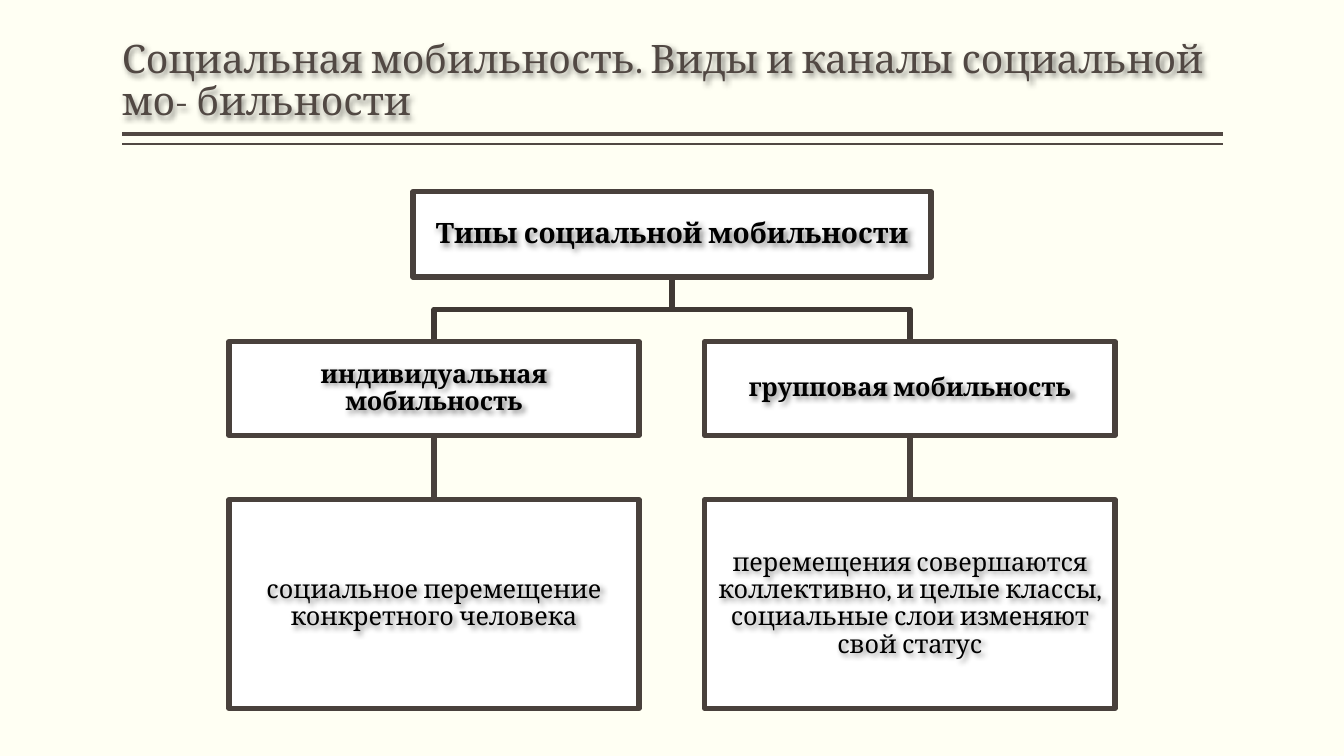
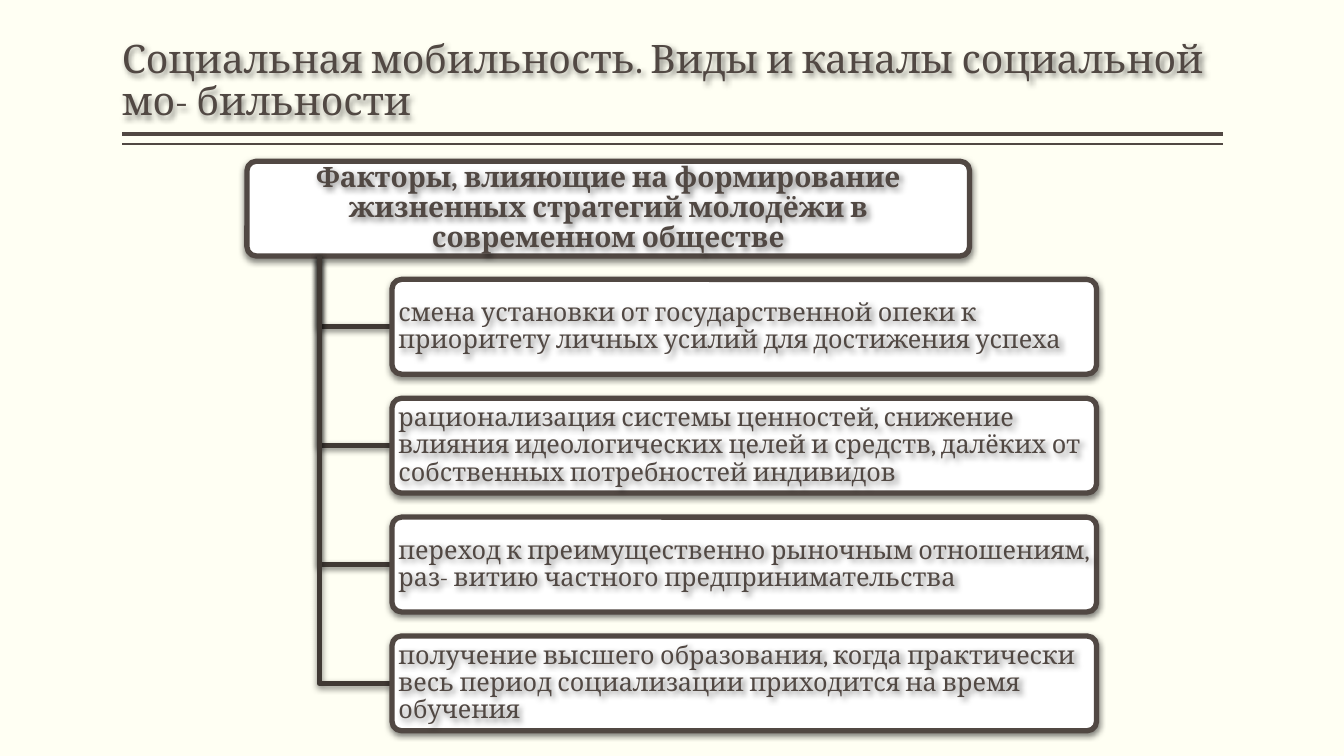
from lxml import etree
from pptx import Presentation
from pptx.dml.color import RGBColor
from pptx.enum.shapes import MSO_CONNECTOR, MSO_SHAPE
from pptx.enum.text import MSO_ANCHOR, MSO_AUTO_SIZE, PP_ALIGN
from pptx.oxml.ns import qn
from pptx.util import Pt

STRAIGHT = MSO_CONNECTOR.STRAIGHT
RECT, ROUNDED = MSO_SHAPE.RECTANGLE, MSO_SHAPE.ROUNDED_RECTANGLE
LEFT, CENTER = PP_ALIGN.LEFT, PP_ALIGN.CENTER
MIDDLE, BOTTOM = MSO_ANCHOR.MIDDLE, MSO_ANCHOR.BOTTOM
NO_AUTOFIT = MSO_AUTO_SIZE.NONE
TOP_SIDE, BOTTOM_SIDE = 0, 2

COLORS = {
    "paper": "FFFFF3",
    "white": "FFFFFF",
    "black": "000000",
    "brown": "514843",
    "frame": "49413C",
    "branch": "403934",
}
FONT = "Cambria"
FRAME_WIDTH = 3.78
# blur, distance (points), direction (degrees), opacity (percent)
TEXT_SHADOW = (4, 2.5, 45, 45)
BOX_SHADOW = (4.5, 1.5, 90, 50)

TITLE = "Социальная мобильность. Виды и каналы социальной мо- бильности"
MOBILITY_TYPES = [
    ("индивидуальная мобильность",
     "социальное перемещение конкретного человека"),
    ("групповая мобильность",
     "перемещения совершаются коллективно, и целые классы, "
     "социальные слои изменяют свой статус"),
]
STRATEGY_FACTORS = [
    "смена установки от государственной опеки к приоритету личных усилий "
    "для достижения успеха",
    "рационализация системы ценностей, снижение влияния идеологических целей "
    "и средств, далёких от собственных потребностей индивидов",
    "переход к преимущественно рыночным отношениям, раз- витию частного "
    "предпринимательства",
    "получение высшего образования, когда практически весь период "
    "социализации приходится на время обучения",
]


def rgb(name):
    return RGBColor.from_string(COLORS[name])


def cast_shadow(shape, shadow):
    """Replace the theme shadow by the given one, or by none."""
    shape.shadow.inherit = False
    if shadow is None:
        return
    blur, distance, direction, opacity = shadow
    effects = shape._element.spPr.find(qn("a:effectLst"))
    outer = etree.SubElement(
        effects, qn("a:outerShdw"), blurRad=str(Pt(blur)),
        dist=str(Pt(distance)), dir=str(direction * 60000),
        algn="ctr", rotWithShape="0")
    tint = etree.SubElement(outer, qn("a:srgbClr"), val=COLORS["black"])
    etree.SubElement(tint, qn("a:alpha"), val=str(opacity * 1000))


class Deck:
    def __init__(self):
        self.prs = Presentation()
        self.prs.slide_width, self.prs.slide_height = Pt(960), Pt(540)
        paper = self.prs.slide_master.background.fill
        paper.solid()
        paper.fore_color.rgb = rgb("paper")
        self.slide = None

    def new_slide(self, title):
        """Start a slide with its title and the double rule below it."""
        self.slide = self.prs.slides.add_slide(self.prs.slide_layouts[5])
        for y, width in ((95.8, 3), (103, 1)):
            self.line((873.4, y), (87.1, y), "brown", width)
        heading = self.slide.shapes.title
        heading.left, heading.top = Pt(87.1), Pt(5.8)
        heading.width, heading.height = Pt(786.3), Pt(86.4)
        cast_shadow(heading, TEXT_SHADOW)
        self.set_text(heading.text_frame, title, 28, "brown", LEFT, BOTTOM,
                      (0, 3.6))

    def set_text(self, frame, text, size, color, align, anchor, insets,
                 bold=False):
        frame.word_wrap = True
        frame.auto_size = NO_AUTOFIT
        frame.vertical_anchor = anchor
        frame.margin_left = frame.margin_right = Pt(insets[0])
        frame.margin_top = frame.margin_bottom = Pt(insets[1])
        paragraph = frame.paragraphs[0]
        paragraph.text = text
        paragraph.alignment = align
        paragraph.line_spacing = 0.9
        font = paragraph.font
        font.name, font.size, font.bold = FONT, Pt(size), bold
        font.color.rgb = rgb(color)

    def line(self, start, end, color, width):
        rule = self.slide.shapes.add_connector(
            STRAIGHT, *(Pt(v) for v in (*start, *end)))
        rule.line.color.rgb = rgb(color)
        rule.line.width = Pt(width)
        etree.SubElement(rule._element.spPr, qn("a:effectLst"))
        return rule

    def link(self, upper, lower):
        """Join two boxes standing one above the other."""
        stem = self.line((0, 0), (0, 0), "frame", FRAME_WIDTH)
        stem.begin_connect(upper, BOTTOM_SIDE)
        stem.end_connect(lower, TOP_SIDE)

    def branch(self, points, shadow=None):
        """Draw an open line with square bends."""
        start, *rest = [(Pt(x), Pt(y)) for x, y in points]
        builder = self.slide.shapes.build_freeform(*start)
        builder.add_line_segments(rest, close=False)
        outline = builder.convert_to_shape()
        outline.fill.background()
        outline.line.color.rgb = rgb("branch")
        outline.line.width = Pt(FRAME_WIDTH)
        cast_shadow(outline, shadow)

    def box(self, area, text, size, bold=False, align=CENTER, rounded=False):
        """Draw a white box under a label whose letters cast a shadow."""
        area = [Pt(v) for v in area]
        card = self.slide.shapes.add_shape(ROUNDED if rounded else RECT, *area)
        if rounded:
            card.adjustments[0] = 0.1
        card.fill.solid()
        card.fill.fore_color.rgb = rgb("white")
        card.line.color.rgb = rgb("brown" if rounded else "frame")
        card.line.width = Pt(FRAME_WIDTH)
        cast_shadow(card, BOX_SHADOW if rounded else None)

        label = self.slide.shapes.add_textbox(*area)
        cast_shadow(label, TEXT_SHADOW)
        self.set_text(label.text_frame, text, size,
                      "brown" if rounded else "black", align, MIDDLE,
                      (4.6, 3.6) if rounded else (0.8, 0.8), bold)
        return card


def mobility_types(deck):
    deck.new_slide(TITLE)
    middle, root_bottom, type_top = 480, 198, 244
    bend = (root_bottom + type_top) / 2
    centers = (310, 650)
    for center in centers:
        deck.branch([(middle, root_bottom), (middle, bend),
                     (center, bend), (center, type_top)])
    deck.box((middle - 185, 137, 370, 61), "Типы социальной мобильности", 20,
             bold=True)
    for center, (name, meaning) in zip(centers, MOBILITY_TYPES):
        left = center - 146.5
        kind = deck.box((left, type_top, 293, 67), name, 18, bold=True)
        detail = deck.box((left, 357, 293, 149), meaning, 18)
        deck.link(kind, detail)


def strategy_factors(deck):
    deck.new_slide(TITLE)
    height, head_top, trunk, left = 67.7, 115.2, 228.2, 280
    deck.box((176.4, head_top, 516.2, height),
             "Факторы, влияющие на формирование жизненных стратегий "
             "молодёжи в современном обществе", 20, bold=True, rounded=True)
    for row, factor in enumerate(STRATEGY_FACTORS):
        top = 199.6 + row * 84.9
        center = top + height / 2
        deck.branch([(trunk, head_top + height), (trunk, center),
                     (left, center)], BOX_SHADOW)
        deck.box((left, top, 503.3, height), factor, 18, align=LEFT,
                 rounded=True)


def main():
    deck = Deck()
    mobility_types(deck)
    strategy_factors(deck)
    deck.prs.save("out.pptx")


if __name__ == "__main__":
    main()
